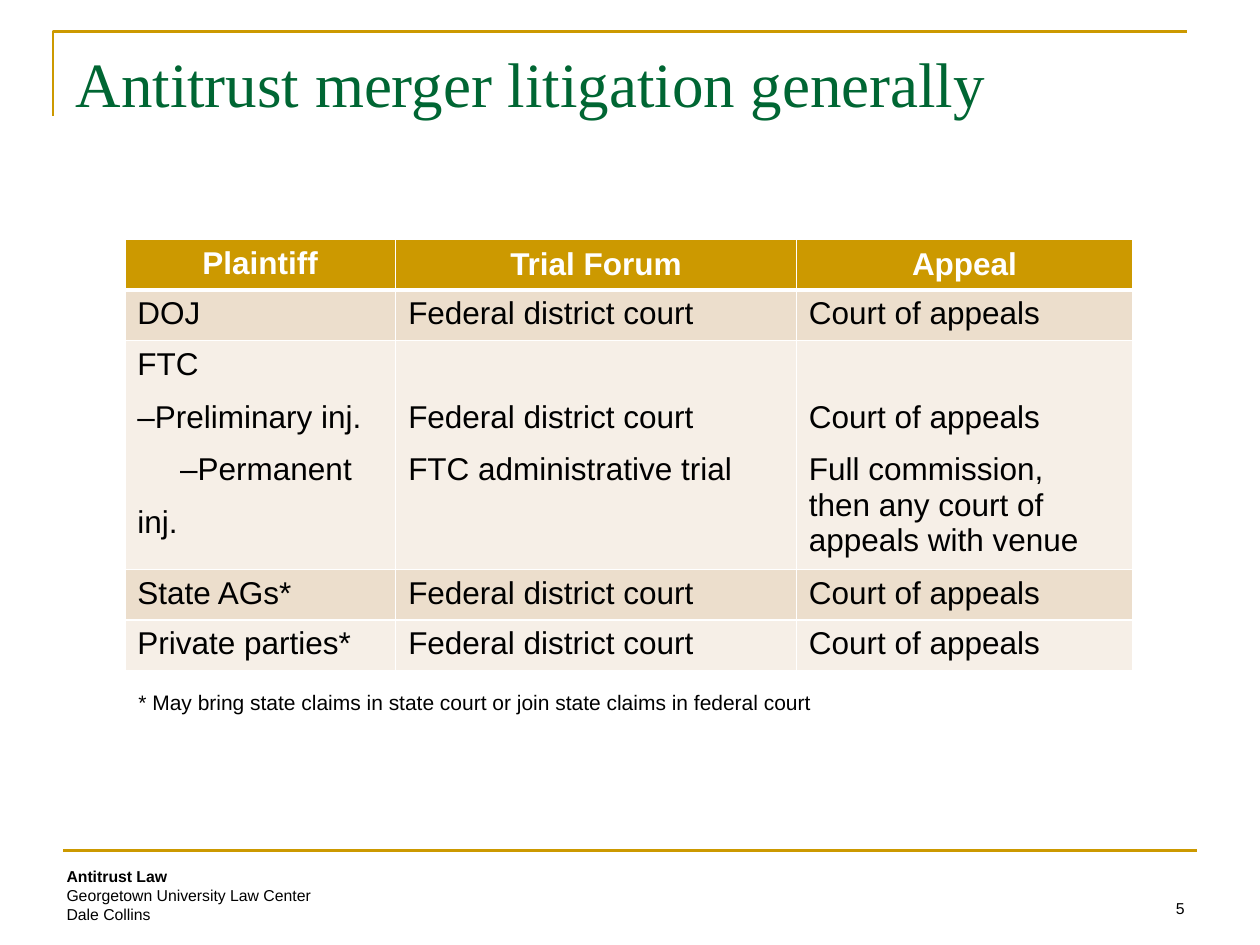
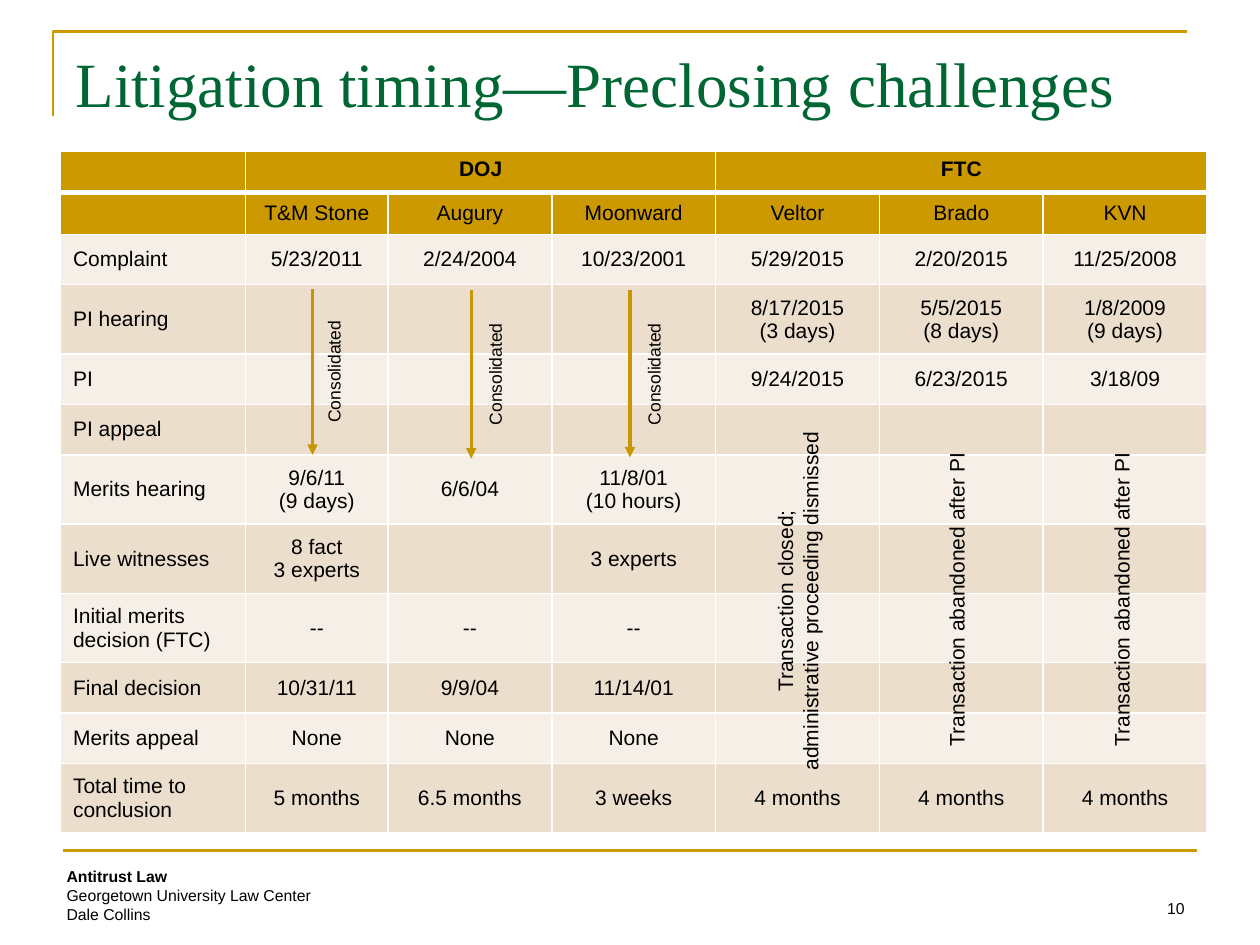
"""Build two slides on antitrust merger litigation."""
import pptx
import pptx.dml.color
import pptx.enum.shapes
import pptx.enum.text
import pptx.oxml
import pptx.oxml.ns
import pptx.util

Inches = pptx.util.Inches
ALIGN = pptx.enum.text.PP_ALIGN
ANCHOR = pptx.enum.text.MSO_ANCHOR
NAMESPACE = pptx.oxml.ns.nsdecls("a")

GOLD, ARROW_GOLD, GREEN = "CC9900", "C89600", "006633"
BLACK, WHITE = "000000", "FFFFFF"
DARK_BAND, LIGHT_BAND = "ECDECC", "F6EFE7"

COURSE = ["Antitrust Law", "Georgetown University Law Center", "Dale Collins"]

FORUMS = {
    "title": "Antitrust merger litigation generally",
    "number": "5",
    "left_top": (0.99, 1.9),
    "columns": [2.15, 3.18, 2.67],
    "heights": [0.4, 0.4, 1.77, 0.4, 0.4],
    "rows": [
        ["Plaintiff", "Trial Forum", "Appeal"],
        ["DOJ", "Federal district court", "Court of appeals"],
        [
            "FTC\n–Preliminary inj.\n–Permanent inj.",
            "Federal district court\nFTC administrative trial",
            "Court of appeals\nFull commission,\nthen any court of appeals with venue",
        ],
        ["State AGs*", "Federal district court", "Court of appeals"],
        ["Private parties*", "Federal district court", "Court of appeals"],
    ],
    "note": "* May bring state claims in state court or join state claims in federal court",
}

TIMING = {
    "title": "Litigation timing—Preclosing challenges",
    "number": "10",
    "left_top": (0.48, 1.2),
    "columns": [1.47, 1.13] + [1.3] * 5,
    "heights": [0.33, 0.33, 0.4, 0.55, 0.4, 0.4, 0.55, 0.55, 0.55, 0.4, 0.4, 0.55],
    "rows": [
        ["", "DOJ", "", "", "FTC", "", ""],
        ["", "T&M Stone", "Augury", "Moonward", "Veltor", "Brado", "KVN"],
        ["Complaint", "5/23/2011", "2/24/2004", "10/23/2001",
         "5/29/2015", "2/20/2015", "11/25/2008"],
        ["PI hearing", "", "", "",
         "8/17/2015\v(3 days)", "5/5/2015\v(8 days)", "1/8/2009\v(9 days)"],
        ["PI", "", "", "", "9/24/2015", "6/23/2015", "3/18/09"],
        ["PI appeal", "", "", "", "", "", ""],
        ["Merits hearing", "9/6/11\v(9 days)", "6/6/04", "11/8/01\v(10 hours)", "", "", ""],
        ["Live witnesses", "8 fact\v3 experts", "", "3 experts", "", "", ""],
        ["Initial merits decision (FTC)", "--", "--", "--", "", "", ""],
        ["Final decision", "10/31/11", "9/9/04", "11/14/01", "", "", ""],
        ["Merits appeal", "None", "None", "None", "", "", ""],
        ["Total time to conclusion", "5 months", "6.5 months", "3 weeks",
         "4 months", "4 months", "4 months"],
    ],
    "agencies": [(1, 3), (4, 6)],
    "consolidations": [
        {"x": 2.48, "top": 2.29, "bottom": 3.61, "label": (2.65, 2.95)},
        {"x": 3.74, "top": 2.3, "bottom": 3.64, "label": (3.93, 2.97)},
        {"x": 5, "top": 2.3, "bottom": 3.63, "label": (5.19, 2.97)},
    ],
    "outcomes": [
        ("Transaction closed;\vadministrative proceeding dismissed", (6.33, 4.77), (2.9, 0.5)),
        ("Transaction abandoned after PI", (7.59, 4.76), (2.55, 0.3)),
        ("Transaction abandoned after PI", (8.9, 4.76), (2.55, 0.3)),
    ],
}


def rgb(code):
    """Turn a hex string into a colour."""
    return pptx.dml.color.RGBColor.from_string(code)


def write(frame, text, size, color=BLACK, bold=False, align=ALIGN.LEFT, font="Arial"):
    """Fill a text frame and format all its paragraphs alike."""
    frame.text = text
    for paragraph in frame.paragraphs:
        paragraph.alignment = align
        paragraph.font.name = font
        paragraph.font.size = pptx.util.Pt(size)
        paragraph.font.bold = bold
        paragraph.font.color.rgb = rgb(color)


def add_text(slide, box, text, size, wrap=True, align=ALIGN.LEFT, rotation=0):
    """Add a text box and return its frame."""
    holder = slide.shapes.add_textbox(*map(Inches, box))
    holder.rotation = rotation
    holder.text_frame.word_wrap = wrap
    write(holder.text_frame, text, size, align=align)
    return holder.text_frame


def add_upright(slide, text, centre, size, points, wrap):
    """Add text that reads upwards around a centre point."""
    (x, y), (width, height) = centre, size
    box = (x - width / 2, y - height / 2, width, height)
    add_text(slide, box, text, points, wrap, ALIGN.CENTER, 270)


def add_line(slide, start, end, color, width):
    """Add a straight line without a shadow."""
    line = slide.shapes.add_connector(
        pptx.enum.shapes.MSO_CONNECTOR.STRAIGHT, *map(Inches, (*start, *end)))
    line.line.color.rgb = rgb(color)
    line.line.width = pptx.util.Pt(width)
    line._element.spPr.append(pptx.oxml.parse_xml(f"<a:effectLst {NAMESPACE}/>"))
    return line


def add_arrow(slide, start, end):
    """Add a line that ends in a triangle."""
    arrow = add_line(slide, start, end, ARROW_GOLD, 1.75)
    arrow.line._get_or_add_ln().append(
        pptx.oxml.parse_xml(f"<a:tailEnd {NAMESPACE} type='triangle'/>"))


def underline_cell(cell, width):
    """Give a cell a white bottom border."""
    cell._tc.get_or_add_tcPr().insert(0, pptx.oxml.parse_xml(
        f"<a:lnB {NAMESPACE} w='{pptx.util.Pt(width)}'><a:solidFill>"
        f"<a:srgbClr val='{WHITE}'/></a:solidFill></a:lnB>"))


def add_page(deck, content):
    """Add a slide with the shared title, rules and footer."""
    slide = deck.slides.add_slide(deck.slide_layouts[5])
    builder = slide.shapes.build_freeform(Inches(0.42), Inches(0.92))
    corner = [(Inches(0.42), Inches(0.25)), (Inches(9.42), Inches(0.25))]
    builder.add_line_segments(corner, close=False)
    bracket = builder.convert_to_shape()
    bracket.shadow.inherit = False
    bracket.fill.background()
    bracket.line.color.rgb = rgb(GOLD)
    bracket.line.width = pptx.util.Pt(1.5)
    add_line(slide, (0.5, 6.75), (9.5, 6.75), GOLD, 1.5)

    title = slide.shapes.title
    title.left, title.top, title.width, title.height = map(Inches, (0.5, 0.3, 9, 0.78))
    title.text_frame.auto_size = pptx.enum.text.MSO_AUTO_SIZE.NONE
    title.text_frame.vertical_anchor = ANCHOR.TOP
    write(title.text_frame, content["title"], 36, GREEN, font="Times New Roman")

    course = add_text(slide, (0.43, 6.83, 4.67, 0.56), "\n".join(COURSE), 9)
    course.paragraphs[0].font.bold = True
    number = add_text(slide, (7.17, 6.83, 2.33, 0.5), content["number"], 9, align=ALIGN.RIGHT)
    number.vertical_anchor = ANCHOR.BOTTOM
    return slide


def add_grid(slide, content, size, header_color, header_rows, centred_from, anchor):
    """Add a table with gold header rows and alternating bands below."""
    rows, columns, heights = content["rows"], content["columns"], content["heights"]
    left, top = content["left_top"]
    box = map(Inches, (left, top, sum(columns), sum(heights)))
    grid = slide.shapes.add_table(len(rows), len(columns), *box).table
    for column, width in zip(grid.columns, columns):
        column.width = Inches(width)
    for r, (row, height) in enumerate(zip(rows, heights)):
        grid.rows[r].height = Inches(height)
        header = r < header_rows
        band = GOLD if header else (DARK_BAND, LIGHT_BAND)[(r + 1) % 2]
        for c, text in enumerate(row):
            cell = grid.cell(r, c)
            if r == 0:
                underline_cell(cell, 3)
            cell.fill.solid()
            cell.fill.fore_color.rgb = rgb(band)
            cell.vertical_anchor = anchor
            align = ALIGN.CENTER if header or c >= centred_from else ALIGN.LEFT
            write(cell.text_frame, text, size, header_color if header else BLACK, r == 0, align)
    return grid


def build_forums(deck):
    """Build the slide on plaintiffs and their forums."""
    slide = add_page(deck, FORUMS)
    grid = add_grid(slide, FORUMS, 18, WHITE, 1, len(FORUMS["columns"]), ANCHOR.TOP)
    for c in (1, 2):
        grid.cell(0, c).vertical_anchor = ANCHOR.MIDDLE
        grid.cell(2, c).margin_top = Inches(0.47)
        grid.cell(2, c).margin_bottom = 0
    plaintiff, trial, appeal = [grid.cell(2, c).text_frame.paragraphs for c in range(3)]
    for step in (*plaintiff[1:], trial[1], appeal[1]):
        step.line_spacing = 1.5
    plaintiff[2]._p.get_or_add_pPr().set("indent", str(Inches(0.34)))
    add_text(slide, (1, 5.42, 5.61, 0.3), FORUMS["note"], 12)


def build_timing(deck):
    """Build the slide on the timing of preclosing challenges."""
    slide = add_page(deck, TIMING)
    grid = add_grid(slide, TIMING, 12, BLACK, 2, 1, ANCHOR.MIDDLE)
    for first, last in TIMING["agencies"]:
        grid.cell(0, first).merge(grid.cell(0, last))
        grid.cell(0, first).vertical_anchor = ANCHOR.TOP
    for case in TIMING["consolidations"]:
        add_arrow(slide, (case["x"], case["top"]), (case["x"], case["bottom"]))
        add_upright(slide, "Consolidated", case["label"], (1.18, 0.27), 10, True)
    for text, centre, size in TIMING["outcomes"]:
        add_upright(slide, text, centre, size, 12, False)


def main():
    """Build and save the deck."""
    deck = pptx.Presentation()
    deck.slide_width, deck.slide_height = Inches(10), Inches(7.5)
    build_forums(deck)
    build_timing(deck)
    deck.save("out.pptx")


if __name__ == "__main__":
    main()
